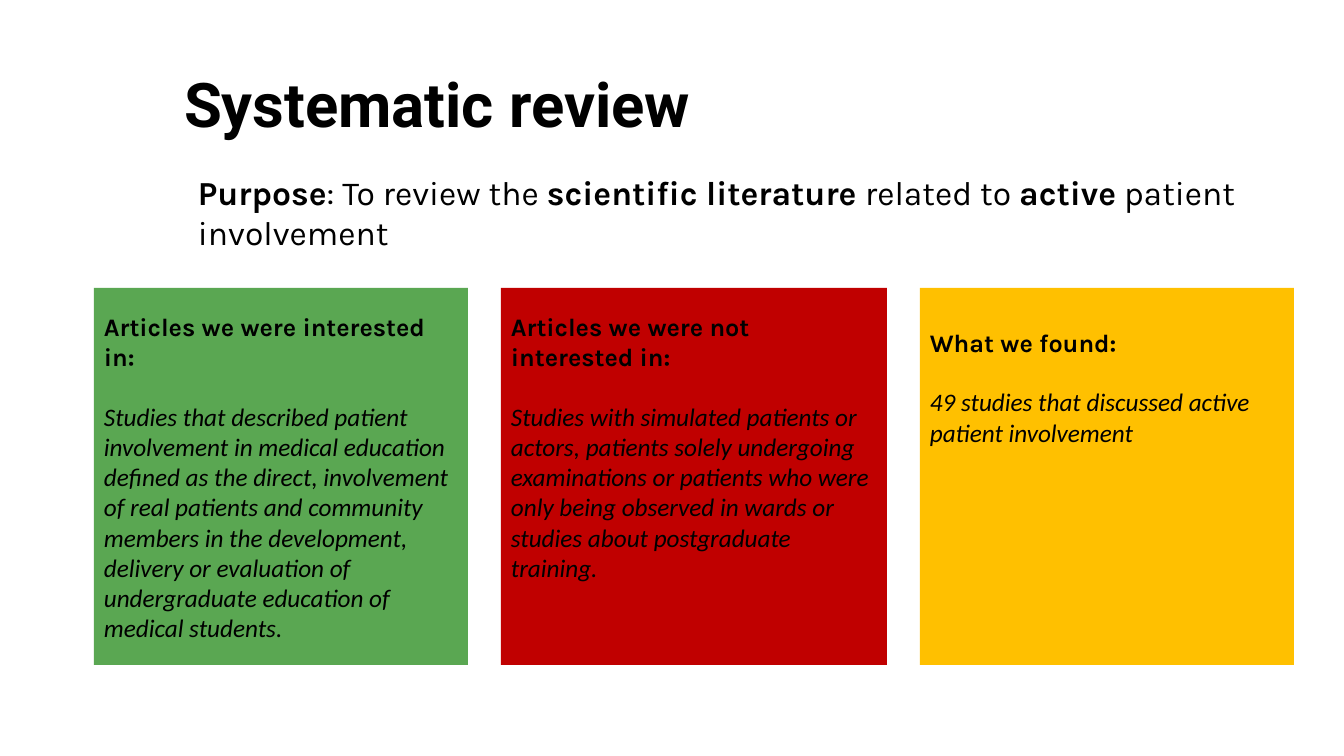
from pptx import Presentation
from pptx.dml.color import RGBColor
from pptx.enum.shapes import MSO_SHAPE
from pptx.enum.text import MSO_ANCHOR, PP_ALIGN
from pptx.util import Emu, Pt

RECTANGLE = MSO_SHAPE.RECTANGLE
TOP = MSO_ANCHOR.TOP
LEFT = PP_ALIGN.LEFT
PX = 914400 / 100.8

THEME = {
    "ink": RGBColor.from_string("000000"),
    "green": RGBColor.from_string("5AA752"),
    "red": RGBColor.from_string("C00000"),
    "amber": RGBColor.from_string("FFC000"),
    "title": {"name": "Roboto", "size": Pt(44), "bold": True},
    "purpose": {"name": "Karla", "size": Pt(24), "bold": False},
    "strong": {"name": "Karla", "size": Pt(24), "bold": True},
    "heading": {"name": "Karla", "size": Pt(18), "bold": True},
    "body": {"name": "Calibri", "size": Pt(18), "bold": False, "italic": True},
}


def px(value):
    return Emu(round(value * PX))


def add_span(para, text, style):
    para.alignment = LEFT
    span = para.add_run()
    span.text = text
    for name, value in THEME[style].items():
        setattr(span.font, name, value)
    span.font.color.rgb = THEME["ink"]


deck = Presentation()
deck.slide_width, deck.slide_height = px(1344), px(756)
page = deck.slides.add_slide(deck.slide_layouts[5])

# Title
title = page.shapes.title
title.left, title.top, title.width, title.height = map(px, (174, 61, 967, 85))
title.text_frame.vertical_anchor = TOP
add_span(title.text_frame.paragraphs[0], "Systematic review", "title")

# Purpose statement
purpose = page.shapes.add_textbox(*map(px, (188, 167, 1129, 50)))
purpose.text_frame.word_wrap = True
for text, style in [
    ("Purpose", "strong"),
    (": To review the ", "purpose"),
    ("scientific literature ", "strong"),
    ("related to ", "purpose"),
    ("active", "strong"),
    (" patient involvement", "purpose"),
]:
    add_span(purpose.text_frame.paragraphs[0], text, style)

# Three cards: colour, width, space above the text, heading, body
CARDS = [
    ("green", 374, 23, "Articles we were interested in:",
     "Studies that described patient involvement in medical education defined "
     "as the direct, involvement of real patients and community members in the "
     "development, delivery or evaluation of undergraduate education of "
     "medical students."),
    ("red", 386, 23, "Articles we were not interested in:",
     "Studies with simulated patients or actors, patients solely undergoing "
     "examinations or patients who were only being observed in wards or "
     "studies about postgraduate training."),
    ("amber", 374, 39, "What we found:",
     "49 studies that discussed active patient involvement"),
]
CARD_TOP, CARD_HEIGHT, CARD_GAP = 288, 377, 33
left = 94
for colour, width, inset, heading, body in CARDS:
    card = page.shapes.add_shape(
        RECTANGLE, *map(px, (left, CARD_TOP, width, CARD_HEIGHT)))
    card.shadow.inherit = False
    card.fill.solid()
    card.fill.fore_color.rgb = THEME[colour]
    card.line.fill.background()
    frame = card.text_frame
    frame.word_wrap = True
    frame.vertical_anchor = TOP
    frame.margin_top = px(inset)
    add_span(frame.paragraphs[0], heading, "heading")
    para = frame.add_paragraph()
    para.space_before = Pt(21)
    add_span(para, body, "body")
    left += width + CARD_GAP

deck.save("out.pptx")
